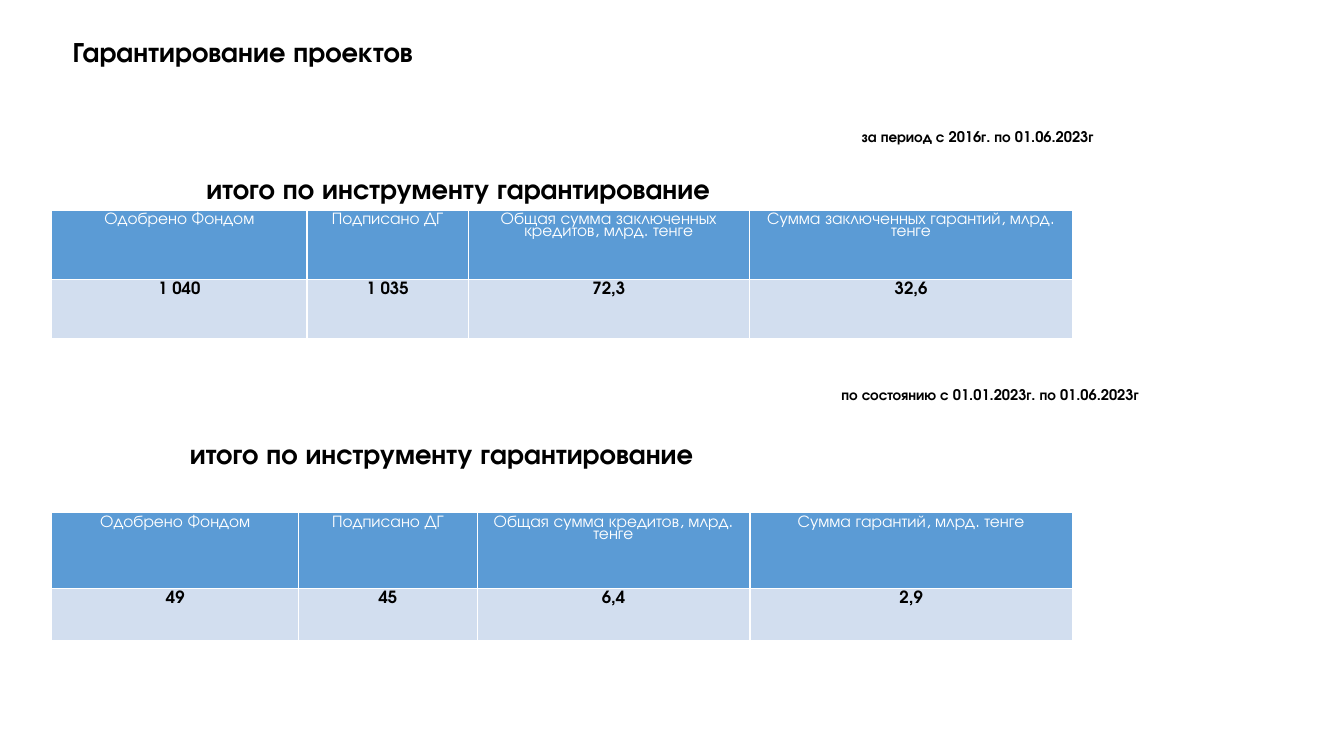
from dataclasses import dataclass

from lxml.etree import SubElement
from pptx import Presentation
from pptx.dml.color import RGBColor as Color
from pptx.enum.text import MSO_ANCHOR as Anchor, MSO_AUTO_SIZE as AutoSize, PP_ALIGN as Align
from pptx.oxml.ns import qn
from pptx.util import Pt


@dataclass(frozen=True)
class Theme:
    font: str = "TeX Gyre Adventor"
    ink: str = "000000"
    white: str = "FFFFFF"
    header: str = "5B9BD5"
    band: str = "D2DEEF"
    heading_size: float = 20
    cell_size: float = 12
    period_size: float = 10.5
    cell_spacing: float = 0.77


class SlideBuilder:
    def __init__(self, slide, theme):
        self.slide = slide
        self.theme = theme

    def style(self, para, size, color, bold=True, align=Align.LEFT):
        para.alignment = align
        para.font.name = self.theme.font
        para.font.size = Pt(size)
        para.font.bold = bold
        para.font.color.rgb = Color.from_string(color)

    def fill_text(self, box, text, size):
        frame = box.text_frame
        frame.text = text
        frame.word_wrap = True
        frame.auto_size = AutoSize.NONE
        frame.vertical_anchor = Anchor.TOP
        para = frame.paragraphs[0]
        self.style(para, size, self.theme.ink)
        return para

    def title(self, text, left, top, width, height):
        box = self.slide.shapes.title
        box.left, box.top, box.width, box.height = map(Pt, (left, top, width, height))
        self.fill_text(box, text, self.theme.heading_size).line_spacing = 1.0

    def label(self, text, left, top, width, height, size, indent=0):
        box = self.slide.shapes.add_textbox(*map(Pt, (left, top, width, height)))
        para = self.fill_text(box, text, size)
        if indent:
            para._p.get_or_add_pPr().set("marL", str(Pt(indent)))

    def borders(self, cell):
        properties = cell._tc.get_or_add_tcPr()
        for side in ("lnL", "lnR", "lnT", "lnB"):
            line = SubElement(properties, qn(f"a:{side}"), w=str(Pt(1)))
            solid = SubElement(line, qn("a:solidFill"))
            SubElement(solid, qn("a:srgbClr"), val=self.theme.white)

    def table(self, rows, left, top, widths, heights):
        theme = self.theme
        frame = self.slide.shapes.add_table(
            len(rows), len(widths), *map(Pt, (left, top, sum(widths), sum(heights))))
        table = frame.table
        for column, width in zip(table.columns, widths):
            column.width = Pt(width)
        for row, height in zip(table.rows, heights):
            row.height = Pt(height)
        for row_index, texts in enumerate(rows):
            is_header = row_index == 0
            for column_index, text in enumerate(texts):
                cell = table.cell(row_index, column_index)
                cell.text = text
                self.borders(cell)
                cell.fill.solid()
                cell.fill.fore_color.rgb = Color.from_string(
                    theme.header if is_header else theme.band)
                para = cell.text_frame.paragraphs[0]
                para.line_spacing = theme.cell_spacing
                self.style(para, theme.cell_size, theme.white if is_header else theme.ink,
                           not is_header, Align.CENTER)


def main():
    deck = Presentation()
    deck.slide_width, deck.slide_height = Pt(960), Pt(540)
    theme = Theme()
    page = SlideBuilder(deck.slides.add_slide(deck.slide_layouts[5]), theme)
    total = "итого по инструменту гарантирование"
    table_left = 37

    page.title("Гарантирование проектов", 44.6, 21, 345, 31.5)

    page.label("за период с 2016г. по 01.06.2023г", 608.4, 88, 229.7, 20, theme.period_size)
    page.label(total, 140.4, 118.8, 420.5, 31.5, theme.heading_size)
    page.table(
        [["Одобрено Фондом", "Подписано ДГ",
          "Общая сумма заключенных кредитов, млрд. тенге",
          "Сумма заключенных гарантий, млрд. тенге"],
         ["1 040", "1 035", "72,3", "32,6"]],
        table_left, 150, [182.3, 115.2, 200.8, 231], [49.7, 42])

    page.label("по состоянию с 01.01.2023г. по 01.06.2023г", 594, 272, 244, 20, theme.period_size)
    page.label(total, 84.2, 308.2, 529.2, 31.5, theme.heading_size, indent=44.3)
    page.table(
        [["Одобрено Фондом", "Подписано ДГ",
          "Общая сумма кредитов, млрд. тенге", "Сумма гарантий, млрд. тенге"],
         ["49", "45", "6,4", "2,9"]],
        table_left, 366, [176.4, 127.5, 194.8, 230.5], [54.3, 37.4])

    deck.save("out.pptx")


if __name__ == "__main__":
    main()
